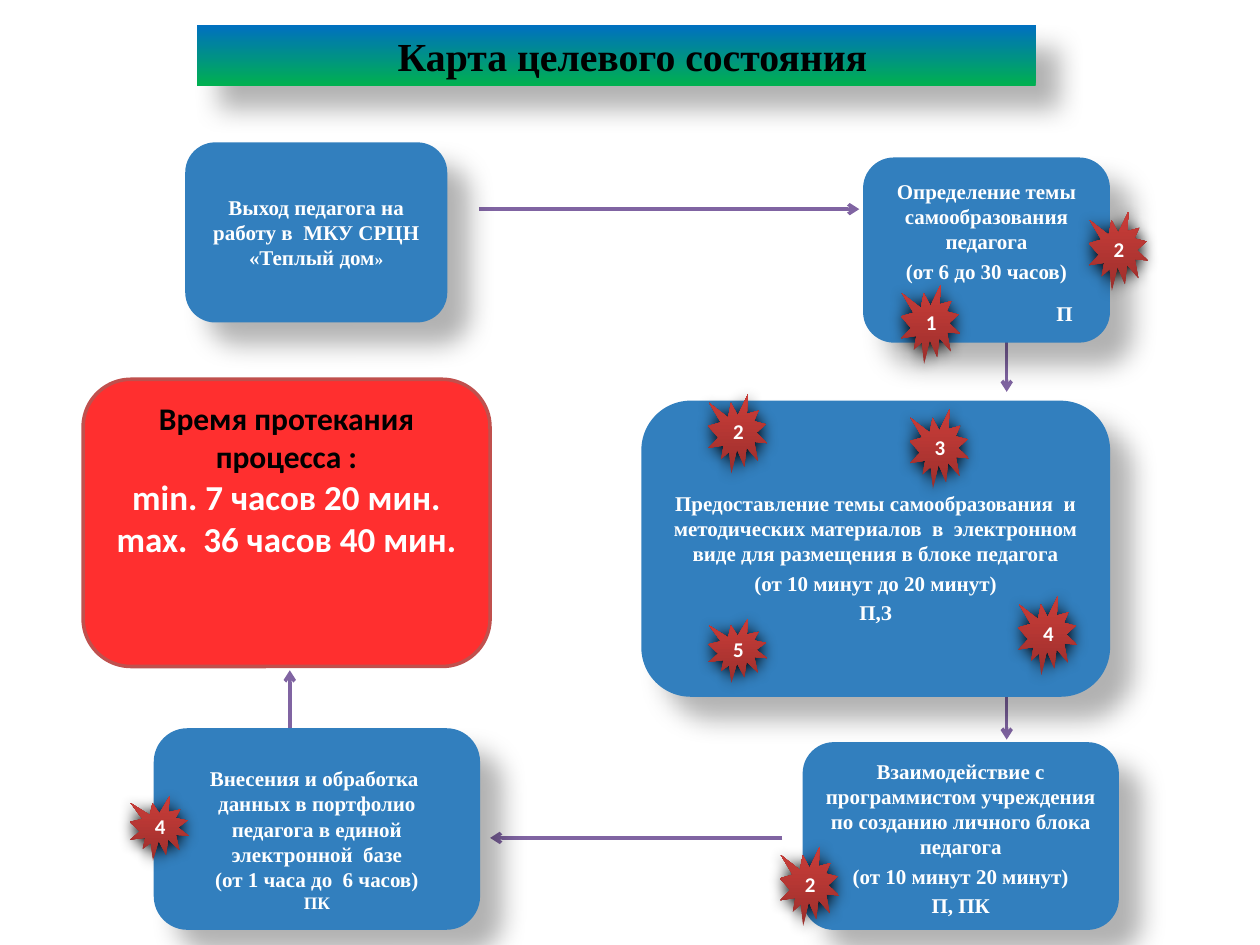
from lxml import etree
from pptx import Presentation
from pptx.dml.color import RGBColor
from pptx.enum.shapes import MSO_CONNECTOR, MSO_SHAPE
from pptx.enum.text import MSO_ANCHOR, MSO_AUTO_SIZE, PP_ALIGN
from pptx.oxml.ns import qn
from pptx.util import Inches, Pt

ROUNDED = MSO_SHAPE.ROUNDED_RECTANGLE
SEAL = MSO_SHAPE.EXPLOSION1
STRAIGHT = MSO_CONNECTOR.STRAIGHT
CENTER = PP_ALIGN.CENTER
MIDDLE = MSO_ANCHOR.MIDDLE
TOP = MSO_ANCHOR.TOP

BLACK = RGBColor(0x00, 0x00, 0x00)
WHITE = RGBColor(0xFF, 0xFF, 0xFF)
GREEN = RGBColor(0x00, 0xB0, 0x50)
BLUE = RGBColor(0x00, 0x70, 0xC0)
STEP_BLUE = RGBColor(0x32, 0x7F, 0xBE)
TIME_RED = RGBColor(0xFF, 0x2F, 0x2F)
BORDER_RED = RGBColor(0xC0, 0x50, 0x4D)
DARK_RED = RGBColor(0x9C, 0x2F, 0x2C)
LIGHT_RED = RGBColor(0xCB, 0x3D, 0x39)
PURPLE = RGBColor(0x80, 0x64, 0xA2)

SERIF = "Times New Roman"
SANS = "Calibri"

BOX_SHADOW = (30, 15, 18, 45)
SEAL_SHADOW = (100, 8.5, 1, 90)

ARROWS = [
    (2.3, 5.89, 2.3, 5.32),
    (7.99, 5.44, 7.99, 5.87),
    (3.8, 1.66, 6.82, 1.66),
    (6.21, 6.65, 3.89, 6.65),
    (7.99, 2.68, 7.99, 3.11),
]

# box, extra top and bottom margin, space between paragraphs, paragraphs of (text, size) runs
STEPS = [
    ((1.47, 1.13, 2.08, 1.43), 0, 0, 0,
     [[("Выход педагога на работу в  МКУ СРЦН «Теплый дом", 12), ("»", 10)]]),
    ((1.22, 5.78, 2.59, 1.6), 0.16, 0, 0,
     [[("Внесения и обработка  данных в портфолио педагога в единой электронной  базе", 12)],
      [("(от 1 часа до  6 часов)", 12)],
      [("ПК", 10)]]),
    ((6.85, 1.25, 1.96, 1.47), 0.03, 0, 2.4,
     [[("Определение темы самообразования педагога", 12)],
      [("(от 6 до 30 часов)", 12)],
      [("П", 12)]]),
    ((5.09, 3.18, 3.72, 2.35), 0.48, 0.34, 2.4,
     [[("Предоставление темы самообразования  и методических материалов  в  "
        "электронном виде для размещения в блоке педагога", 12)],
      [("(от 10 минут до 20 минут)", 12)],
      [("П,З", 12)]]),
    ((6.37, 5.89, 2.51, 1.49), 0.03, 0, 2.4,
     [[("Взаимодействие с программистом учреждения по созданию личного блока педагога", 12)],
      [("(от 10 минут 20 минут)", 12)],
      [("П, ПК", 12)]]),
]
TOPIC_STEP = 2

MARKERS = [
    ("1", 7.15, 2.26, 0.63),
    ("2", 8.64, 1.68, 0.63),
    ("3", 7.22, 3.25, 0.63),
    ("2", 6.19, 6.72, 0.63),
    ("4", 8.08, 4.73, 0.63),
    ("2", 5.62, 3.13, 0.63),
    ("4", 1.03, 6.32, 0.51),
    ("5", 5.62, 4.91, 0.51),
]


def set_font(font, name, size, color):
    font.name = name
    font.size = Pt(size)
    font.bold = True
    font.italic = False
    font.color.rgb = color


def fill_gradient(shape, start, end):
    shape.fill.gradient()
    shape.fill.gradient_angle = 90
    for stop, position, color in zip(shape.fill.gradient_stops, (0, 1), (start, end)):
        stop.position = position
        stop.color.rgb = color


def add_shadow(shape, opacity, blur, distance, angle):
    shape.shadow.inherit = False
    effects = shape._element.spPr.find(qn("a:effectLst"))
    shadow = etree.SubElement(effects, qn("a:outerShdw"), blurRad=str(Pt(blur)),
                              dist=str(Pt(distance)), dir=str(angle * 60000),
                              algn="ctr", rotWithShape="0")
    color = etree.SubElement(shadow, qn("a:srgbClr"), val=str(BLACK))
    etree.SubElement(color, qn("a:alpha"), val=str(opacity * 1000))


def add_box(slide, preset, box, anchor):
    shape = slide.shapes.add_shape(preset, *map(Inches, box))
    shape.shadow.inherit = False
    shape.line.fill.background()
    shape.text_frame.word_wrap = True
    shape.text_frame.vertical_anchor = anchor
    return shape


def add_paragraph(frame, index):
    paragraph = frame.add_paragraph() if index else frame.paragraphs[0]
    paragraph.alignment = CENTER
    return paragraph


def add_title(slide, box):
    title = slide.shapes.title
    title.left, title.top, title.width, title.height = map(Inches, box)
    fill_gradient(title, GREEN, BLUE)
    add_shadow(title, *BOX_SHADOW)
    frame = title.text_frame
    frame.auto_size = MSO_AUTO_SIZE.NONE
    frame.vertical_anchor = MIDDLE
    frame.margin_left = Inches(0.36)
    frame.text = "Карта целевого состояния"
    heading = add_paragraph(frame, 0)
    set_font(heading.font, SERIF, 22.7, BLACK)


def add_arrow(slide, ends):
    arrow = slide.shapes.add_connector(STRAIGHT, *map(Inches, ends))
    arrow.line.color.rgb = PURPLE
    arrow.line.width = Pt(0)
    etree.SubElement(arrow.line._get_or_add_ln(), qn("a:tailEnd"), type="arrow")
    etree.SubElement(arrow._element.spPr, qn("a:effectLst"))


def add_step(slide, box, extra_top, extra_bottom, gap, paragraphs):
    step = add_box(slide, ROUNDED, box, MIDDLE)
    step.fill.solid()
    step.fill.fore_color.rgb = STEP_BLUE
    add_shadow(step, *BOX_SHADOW)
    frame = step.text_frame
    frame.margin_top = Inches(0.05 + extra_top)
    frame.margin_bottom = Inches(0.05 + extra_bottom)
    for index, runs in enumerate(paragraphs):
        paragraph = add_paragraph(frame, index)
        if index:
            paragraph.space_before = Pt(gap)
        for text, size in runs:
            run = paragraph.add_run()
            run.text = text
            set_font(run.font, SERIF, size, WHITE)
    return step


def indent_performer(step):
    performer = step.text_frame.paragraphs[-1]
    performer.space_before = Pt(9.5)
    performer._p.get_or_add_pPr().set("marL", str(Inches(1.24)))


def add_total_time(slide, box):
    total = add_box(slide, ROUNDED, box, TOP)
    total.fill.solid()
    total.fill.fore_color.rgb = TIME_RED
    total.line.color.rgb = BORDER_RED
    total.line.width = Pt(2)
    lines = [("Время протекания процесса :", 18, BLACK),
             ("min. 7 часов 20 мин.", 20, WHITE),
             ("max.  36 часов 40 мин.", 20, WHITE)]
    for index, (text, size, color) in enumerate(lines):
        paragraph = add_paragraph(total.text_frame, index)
        paragraph.text = text
        set_font(paragraph.font, SANS, size, color)


def add_marker(slide, number, left, top, height):
    marker = add_box(slide, SEAL, (left, top, 0.47, height), MIDDLE)
    fill_gradient(marker, DARK_RED, LIGHT_RED)
    add_shadow(marker, *SEAL_SHADOW)
    label = add_paragraph(marker.text_frame, 0)
    label.text = number
    set_font(label.font, SANS, 12, WHITE)


def main():
    deck = Presentation()
    deck.slide_width, deck.slide_height = Inches(10), Inches(7.5)
    slide = deck.slides.add_slide(deck.slide_layouts[5])
    add_title(slide, (1.56, 0.2, 6.66, 0.48))
    for ends in ARROWS:
        add_arrow(slide, ends)
    steps = [add_step(slide, *step) for step in STEPS]
    indent_performer(steps[TOPIC_STEP])
    add_total_time(slide, (0.66, 3.01, 3.23, 2.28))
    for marker in MARKERS:
        add_marker(slide, *marker)
    deck.save("out.pptx")


if __name__ == "__main__":
    main()
